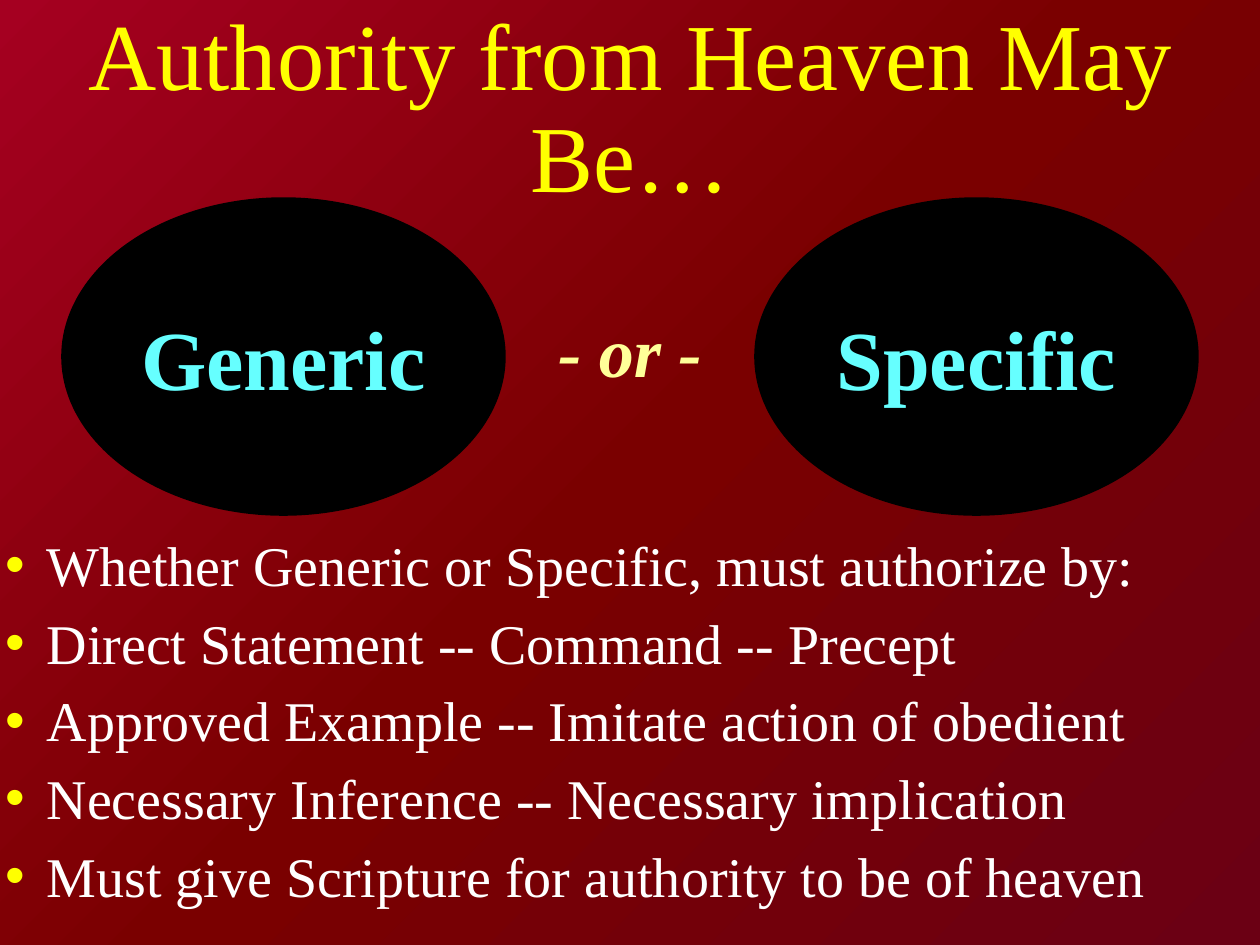
from lxml import etree
from pptx import Presentation
from pptx import util as u
from pptx.dml.color import RGBColor
from pptx.enum import shapes, text
from pptx.oxml import parse_xml
from pptx.oxml.ns import nsdecls, qn

Inches, Pt = u.Inches, u.Pt
INDENT = Inches(0.33)


def rgb(value):
    return RGBColor.from_string(value)


def write(p, content, size=32, color="FFFFFF", bold=False, italic=False,
          font="Times New Roman", align=None):
    p.alignment = align
    r = p.add_run()
    r.text = content
    f = r.font
    f.name, f.size, f.bold, f.italic = font, Pt(size), bold, italic
    f.color.rgb = rgb(color)
    return r


def add_bullet(p, color):
    pPr = p._p.get_or_add_pPr()
    pPr.set("marL", str(INDENT))
    pPr.set("indent", str(-INDENT))
    clr = etree.SubElement(pPr, qn("a:buClr"))
    etree.SubElement(clr, qn("a:srgbClr")).set("val", color)
    etree.SubElement(pPr, qn("a:buChar")).set("char", "•")


def add_text_shadow(r):
    fill = r._r.get_or_add_rPr().find(qn("a:solidFill"))
    fill.addnext(parse_xml(
        f'<a:effectLst {nsdecls("a")}><a:outerShdw blurRad="38100" dist="38100" '
        'dir="2700000" algn="tl"><a:srgbClr val="000000"/></a:outerShdw></a:effectLst>'))


class Deck:
    """Holds the style and the current slide."""
    accent, label, joiner = "FFFF00", "66FFFF", "FFFF99"
    center = text.PP_ALIGN.CENTER

    def __init__(self):
        self.prs = Presentation()
        self.prs.slide_width, self.prs.slide_height = Inches(10), Inches(7.5)
        self.s = self.prs.slides.add_slide(self.prs.slide_layouts[1])

    def background(self, stops, angle):
        fill = self.s.background.fill
        fill.gradient()
        grad = self.s.background._cSld.find(".//" + qn("a:gradFill"))
        gs = "".join(f'<a:gs pos="{pos * 1000}"><a:srgbClr val="{c}"/></a:gs>'
                     for pos, c in stops)
        grad.getparent().replace(grad, parse_xml(
            f'<a:gradFill {nsdecls("a")} rotWithShape="0"><a:gsLst>{gs}</a:gsLst>'
            f'<a:lin ang="{angle * 60000}" scaled="1"/></a:gradFill>'))

    def place(self, sp, x, y, w, h, anchor, margin=0.04):
        sp.left, sp.top, sp.width, sp.height = map(Inches, (x, y, w, h))
        tf = sp.text_frame
        tf.word_wrap, tf.auto_size = True, text.MSO_AUTO_SIZE.NONE
        tf.vertical_anchor = anchor
        tf.margin_left = tf.margin_right = tf.margin_top = tf.margin_bottom = Inches(margin)
        return tf

    def title(self, content, *box):
        tf = self.place(self.s.shapes.title, *box, text.MSO_ANCHOR.MIDDLE)
        p = tf.paragraphs[0]
        p.line_spacing = 0.9
        add_text_shadow(write(p, content, size=54, color=self.accent, align=self.center))

    def bullets(self, items, *box):
        tf = self.place(self.s.placeholders[1], *box, text.MSO_ANCHOR.TOP)
        for i, item in enumerate(items):
            p = tf.add_paragraph() if i else tf.paragraphs[0]
            p.space_before, p.space_after = Pt(0), Pt(6)
            add_bullet(p, self.accent)
            write(p, item)

    def ellipse(self, content, x, y, w, h):
        sp = self.s.shapes.add_shape(shapes.MSO_SHAPE.OVAL, *map(Inches, (x, y, w, h)))
        sp.shadow.inherit = False
        sp.fill.solid()
        sp.fill.fore_color.rgb = sp.line.color.rgb = rgb("000000")
        sp.line.width = Pt(2)
        tf = sp.text_frame
        tf.vertical_anchor = text.MSO_ANCHOR.MIDDLE
        write(tf.paragraphs[0], content, size=48, color=self.label, bold=True,
              align=self.center)

    def caption(self, content, x, y, w, h):
        tf = self.s.shapes.add_textbox(*map(Inches, (x, y, w, h))).text_frame
        tf.word_wrap, tf.auto_size = True, text.MSO_AUTO_SIZE.SHAPE_TO_FIT_TEXT
        write(tf.paragraphs[0], content, size=40, color=self.joiner, bold=True,
              italic=True, align=self.center)


def main():
    deck = Deck()
    deck.background([(0, "A50021"), (50, "7A0000"), (100, "6B0014")], 45)
    deck.title("Authority from Heaven May Be…", 0.5, 0.17, 9, 1.42)
    deck.bullets([
        "Whether Generic or Specific, must authorize by:",
        "Direct Statement -- Command -- Precept",
        "Approved Example -- Imitate action of obedient",
        "Necessary Inference -- Necessary implication",
        "Must give Scripture for authority to be of heaven",
    ], 0, 4.17, 10, 3.33)
    for content, x in (("Generic", 0.5), ("Specific", 6)):
        deck.ellipse(content, x, 1.58, 3.5, 2.5)
    deck.caption("- or -", 4, 2.39, 2, 0.77)
    deck.prs.save("out.pptx")


if __name__ == "__main__":
    main()
